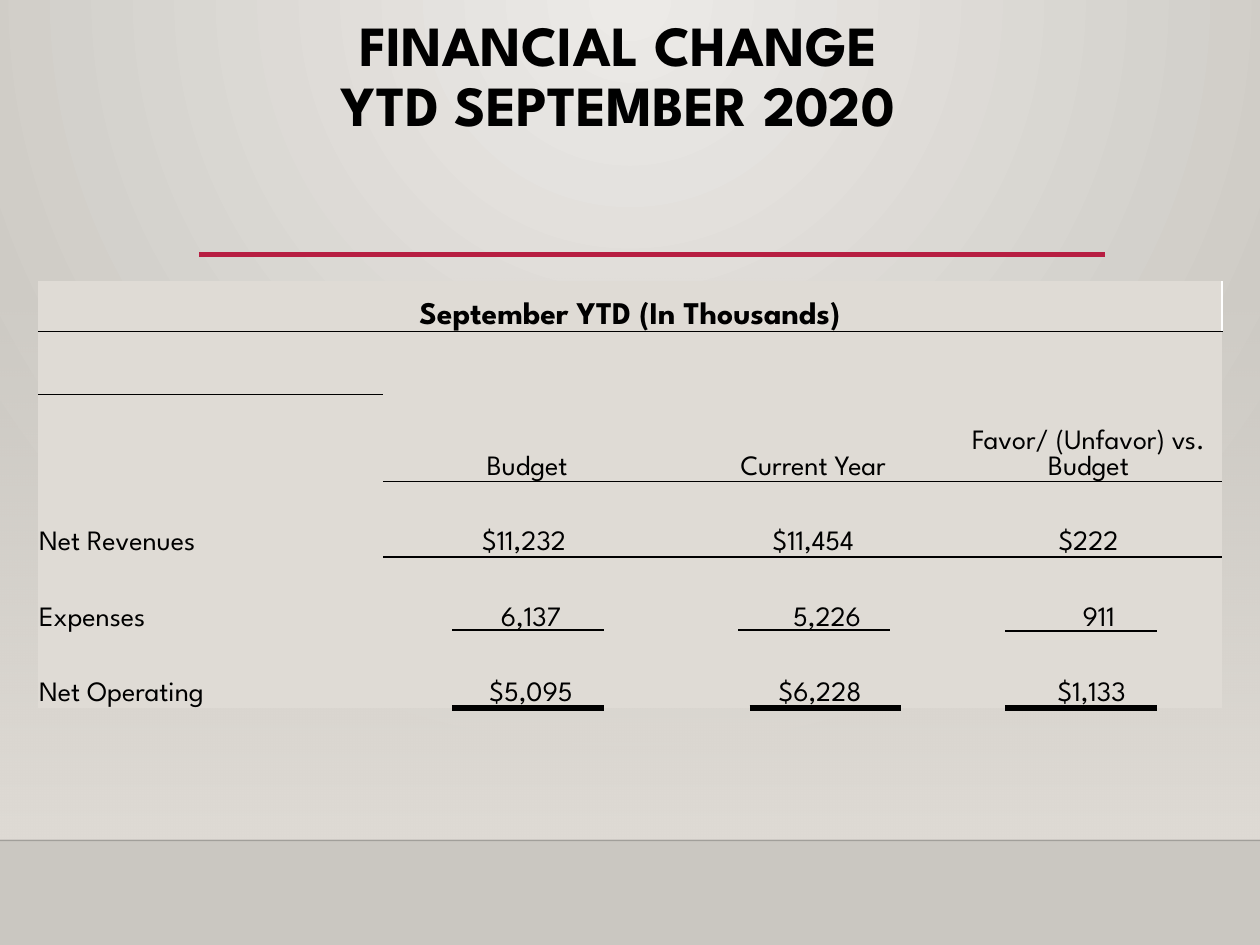
from dataclasses import dataclass
from lxml import etree
from pptx import Presentation
from pptx.dml.color import RGBColor
from pptx.enum.dml import MSO_FILL
from pptx.enum.shapes import MSO_CONNECTOR, MSO_SHAPE
from pptx.enum.text import MSO_ANCHOR, PP_ALIGN
from pptx.oxml import parse_xml
from pptx.oxml.ns import nsdecls, qn
from pptx.util import Inches, Pt

LINE, RECT = MSO_CONNECTOR.STRAIGHT, MSO_SHAPE.RECTANGLE
TOP, BOTTOM = MSO_ANCHOR.TOP, MSO_ANCHOR.BOTTOM
LEFT, CENTER = PP_ALIGN.LEFT, PP_ALIGN.CENTER


@dataclass
class Theme:
    font: str = "League Spartan"
    ink: str = "000000"
    white: str = "FFFFFF"
    red: str = "B71E42"
    panel: str = "DFDBD5"
    light: str = "ECEAE7"
    dark: str = "CAC7C1"
    floor: str = "000001"
    title: float = 32.4
    head: float = 18
    body: float = 16


theme = Theme()


def style(para, size, bold, align):
    para.alignment = align
    font = para.font
    for run in para.runs:
        font = run.font
        font.name, font.size, font.bold = theme.font, Pt(size), bold
        font.color.rgb = RGBColor.from_string(theme.ink)
    if not para.runs:
        font.size = Pt(size)


def rule(x1, x2, y, color, width):
    line = slide.shapes.add_connector(LINE, Inches(x1), Inches(y), Inches(x2), Inches(y))
    line.line.color.rgb = RGBColor.from_string(color)
    line.line.width = Pt(width)
    etree.SubElement(line._element.spPr, qn("a:effectLst"))
    return line


prs = Presentation()
prs.slide_width, prs.slide_height = Inches(10), Inches(7.5)
slide = prs.slides.add_slide(prs.slide_layouts[6])

# Background: light spot at the top centre
fill = slide.background.fill
fill.gradient()
for stop, color in zip(fill.gradient_stops, (theme.light, theme.dark)):
    stop.color.rgb = RGBColor.from_string(color)
grad = slide._element.find(".//" + qn("a:gradFill"))
grad.replace(grad.find(qn("a:lin")), parse_xml(
    f'<a:path {nsdecls("a")} path="circle">'
    '<a:fillToRect l="43000" t="0" r="43000" b="100000"/></a:path>'))

# Wall that fades in downwards, and the floor edge
wall = slide.shapes.add_shape(RECT, 0, Inches(2.2), Inches(10), Inches(4.46))
wall.shadow.inherit = False
wall.line.fill.background()
wall.fill.gradient()
wall.fill.gradient_angle = 270
for stop in wall.fill.gradient_stops:
    stop.color.rgb = RGBColor.from_string(theme.panel)
first = wall._element.find(".//" + qn("a:srgbClr"))
etree.SubElement(first, qn("a:alpha"), val="0")
edge = rule(0, 10, 6.67, theme.floor, 1)
tint = edge._element.find(".//" + qn("a:srgbClr"))
etree.SubElement(tint, qn("a:alpha"), val="20000")

# Title and red rule
rule(1.58, 8.77, 2.02, theme.red, 2.5)
box = slide.shapes.add_textbox(Inches(0.81), Inches(0.09), Inches(8.2), Inches(1.13))
frame = box.text_frame
frame.word_wrap, frame.vertical_anchor = True, TOP
para = frame.paragraphs[0]
para.text = "FINANCIAL CHANGE\vYTD SEPTEMBER 2020"
para.line_spacing = Pt(34.3)
style(para, theme.title, True, CENTER)

# Table: text and right (+) or left (-) indent of each figure
cols = (2.74, 2.29, 2.25, 2.12)
rows = (0.4, 0.5, 0.34, 0.35, 0.6, 0.6, 0.6)
cells = {
    0: [("September YTD (In Thousands)", 0)],
    1: [("", 0), ("Budget", 0), ("Current Year", 0), ("Favor/ (Unfavor) vs. Budget", 0)],
    4: [("Net Revenues", 0), ("$11,232", -0.05), ("$11,454", 0), ("$222", 0)],
    5: [("Expenses", 0), ("6,137", 0.06), ("5,226", 0.22), ("911", 0.16)],
    6: [("Net Operating", 0), ("$5,095", 0.06), ("$6,228", 0.11), ("$1,133", 0.05)],
}
table = slide.shapes.add_table(len(rows), len(cols), Inches(0.3), Inches(2.23),
                               Inches(sum(cols)), Inches(sum(rows))).table
table.first_row = table.horz_banding = False
table._tbl.tblPr.find(qn("a:tableStyleId")).text = "{2D5ABB26-0587-4C30-8999-92F81FD0307C}"
for col, width in zip(table.columns, cols):
    col.width = Inches(width)
for row, height in zip(table.rows, rows):
    row.height = Inches(height)
table.cell(0, 0).merge(table.cell(0, 3))
for c in (1, 2, 3):
    table.cell(1, c).merge(table.cell(3, c))

for r in range(len(rows)):
    for c in range(len(cols)):
        cell = table.cell(r, c)
        line = cells.get(r, [])
        text, nudge = line[c] if c < len(line) else ("", 0)
        cell.fill.solid()
        cell.fill.fore_color.rgb = RGBColor.from_string(theme.panel)
        cell.vertical_anchor = BOTTOM
        cell.margin_left = Inches(0.01 + max(nudge, 0))
        cell.margin_right = Inches(0.01 + max(-nudge, 0))
        cell.margin_top, cell.margin_bottom = Inches(0.01), 0
        para = cell.text_frame.paragraphs[0]
        para.text = text
        style(para, theme.body if r else theme.head, r == 0, CENTER if c or not r else LEFT)

        # Borders, in schema order
        sides = []
        if r == 0 and c in (0, 3):
            sides.append(("lnR", theme.white))
        if r == 1 or (r == 4 and c):
            sides.append(("lnT", theme.ink))
        if r == 0 or (r in (1, 3) and c):
            sides.append(("lnB", theme.ink))
        for i, (side, color) in enumerate(sides):
            cell._tc.get_or_add_tcPr().insert(i, parse_xml(
                f'<a:{side} {nsdecls("a")} w="12700"><a:solidFill>'
                f'<a:srgbClr val="{color}"/></a:solidFill></a:{side}>'))

# Sum rules under expenses (thin) and net operating (thick)
for thin, thick, y in ((3.59, 3.59, 5), (5.86, 5.95, 5), (7.98, 7.98, 5.01)):
    rule(thick, thick + 1.2, 5.62, theme.ink, 3)
    rule(thin, thin + 1.2, y, theme.ink, 1.25)

prs.save("out.pptx")
